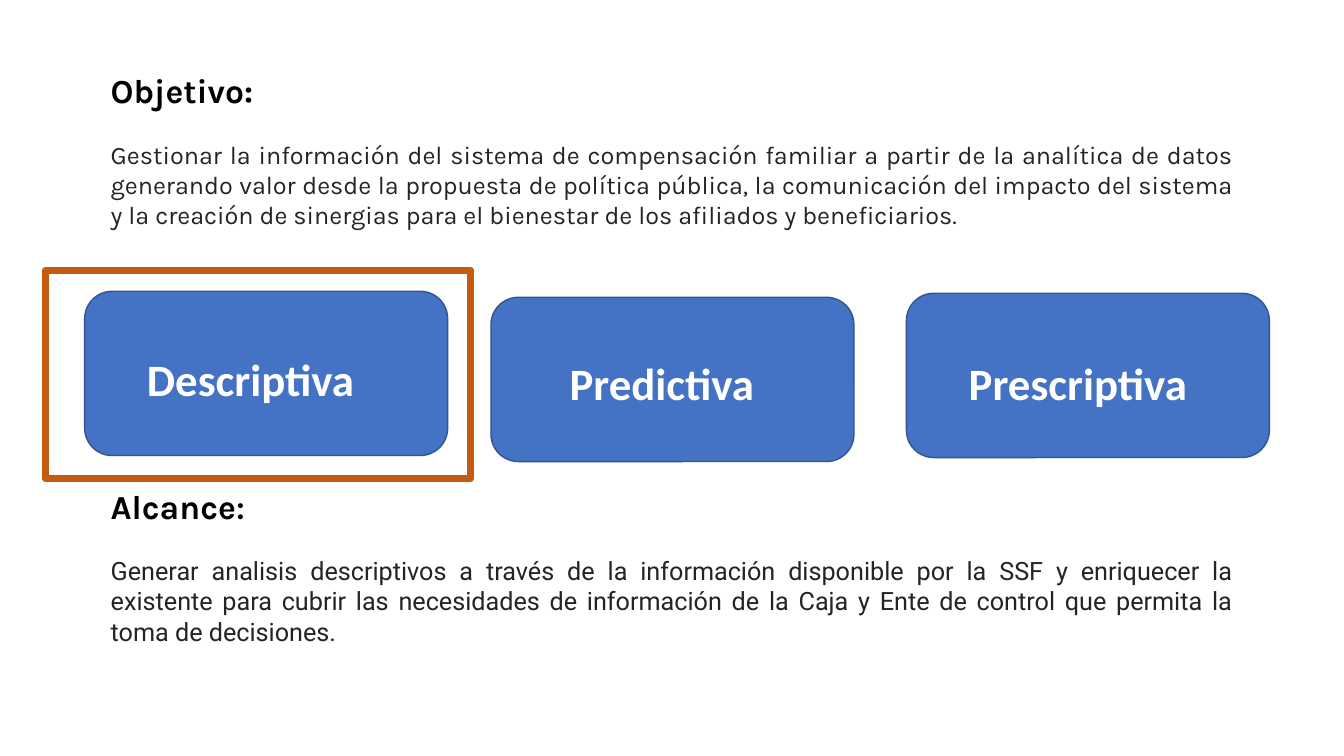
import pptx
import pptx.util
import pptx.dml.color
import pptx.enum.shapes
import pptx.enum.text

WIDTH, HEIGHT = 13.33, 7.5

SECTIONS = [
    {
        "heading": [("Objetivo", "Karla"), (":", "Karla")],
        "body": "Gestionar la información del sistema de compensación familiar a partir de la analítica de datos "
                "generando valor desde la propuesta de política pública, la comunicación del impacto del sistema "
                "y la creación de sinergias para el bienestar de los afiliados y beneficiarios.",
        "body_font": "Karla",
        "area": (7.5, 8.53, 85, 39.07),
    },
    {
        "heading": [("Alcance", "Karla"), (":", "Calibri")],
        "body": "Generar analisis descriptivos a través de la información disponible por la SSF y enriquecer la "
                "existente para cubrir las necesidades de información de la Caja y Ente de control que permita la "
                "toma de decisiones.",
        "body_font": "Roboto",
        "area": (7.5, 63.6, 85, 35.07),
    },
]

ANALYTICS = [
    ("Descriptiva", (6.3, 38.53), (10.2, 45.87)),
    ("Predictiva", (36.53, 39.33), (41.64, 46.4)),
    ("Prescriptiva", (67.44, 38.8), (71.34, 46.4)),
]
CARD_SIZE = (27.01, 21.73)
LABEL_SIZE = (19.28, 8.53)
HIGHLIGHT = (3.38, 35.73, 31.66, 27.6)


def color(value):
    return pptx.dml.color.RGBColor.from_string(value)


def place(left, top, width, height):
    return [pptx.util.Inches(share / 100 * side)
            for share, side in zip((left, top, width, height), (WIDTH, HEIGHT) * 2)]


def style(run, font, size, tint, bold):
    run.font.name = font
    run.font.size = pptx.util.Pt(size)
    run.font.color.rgb = color(tint)
    run.font.bold = bold


def add_frame(slide, area):
    frame = slide.shapes.add_textbox(*place(*area)).text_frame
    frame.word_wrap = True
    return frame


def add_outline(slide, kind, area, fill, line, weight):
    outline = slide.shapes.add_shape(kind, *place(*area))
    outline.shadow.inherit = False
    if fill:
        outline.fill.solid()
        outline.fill.fore_color.rgb = color(fill)
    else:
        outline.fill.background()
    outline.line.color.rgb = color(line)
    outline.line.width = pptx.util.Pt(weight)


def add_section(slide, section):
    frame = add_frame(slide, section["area"])
    heading = frame.paragraphs[0]
    for words, font in section["heading"]:
        run = heading.add_run()
        run.text = words
        style(run, font, 24, "000000", True)
    body = frame.add_paragraph()
    body.text = section["body"]
    body.alignment = pptx.enum.text.PP_ALIGN.JUSTIFY
    body.space_before = pptx.util.Pt(21)
    style(body.runs[0], section["body_font"], 18, "242424", False)


def main():
    deck = pptx.Presentation()
    deck.slide_width = pptx.util.Inches(WIDTH)
    deck.slide_height = pptx.util.Inches(HEIGHT)
    slide = deck.slides.add_slide(deck.slide_layouts[6])
    shapes = pptx.enum.shapes.MSO_SHAPE

    objective, scope = SECTIONS
    add_section(slide, objective)
    for name, card, label in ANALYTICS:
        add_outline(slide, shapes.ROUNDED_RECTANGLE, card + CARD_SIZE, "4472C4", "325491", 1)
        frame = add_frame(slide, label + LABEL_SIZE)
        frame.text = name
        style(frame.paragraphs[0].runs[0], "Calibri", 32, "FFFFFF", True)
    add_section(slide, scope)
    add_outline(slide, shapes.RECTANGLE, HIGHLIGHT, None, "C55A11", 5)

    deck.save("out.pptx")


if __name__ == "__main__":
    main()
